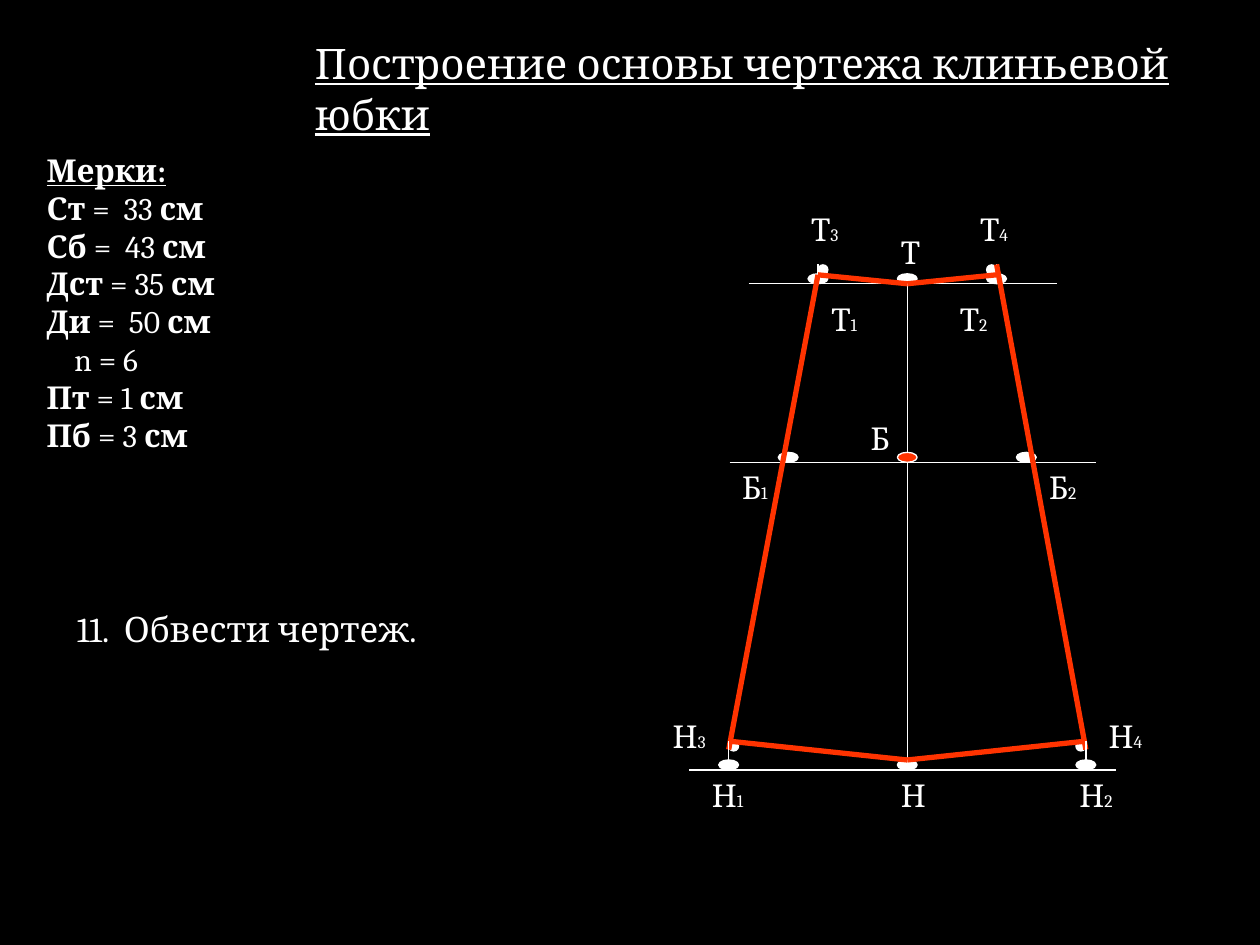
from dataclasses import dataclass

from lxml import etree
from pptx import Presentation
from pptx.dml.color import RGBColor
from pptx.enum.shapes import MSO_CONNECTOR, MSO_SHAPE
from pptx.enum.text import MSO_AUTO_SIZE
from pptx.oxml.ns import qn
from pptx.util import Cm, Pt

STRAIGHT = MSO_CONNECTOR.STRAIGHT
OVAL = MSO_SHAPE.OVAL
GROW = MSO_AUTO_SIZE.SHAPE_TO_FIT_TEXT


@dataclass(frozen=True)
class Theme:
    font: str = "Cambria"
    background: RGBColor = RGBColor(0, 0, 0)
    white: RGBColor = RGBColor(255, 255, 255)
    red: RGBColor = RGBColor(0xFF, 0x33, 0x00)
    title: int = 24
    step: int = 20
    body: int = 18
    index: int = 10
    thin: float = 0.75
    thick: float = 3


class Drawing:
    def __init__(self, slide, theme):
        self.slide = slide
        self.theme = theme
        slide.background.fill.solid()
        slide.background.fill.fore_color.rgb = theme.background

    def line(self, start, end, outline=False):
        connector = self.slide.shapes.add_connector(
            STRAIGHT, *(Cm(value) for value in (*start, *end)))
        connector.line.color.rgb = self.theme.red if outline else self.theme.white
        connector.line.width = Pt(self.theme.thick if outline else self.theme.thin)
        etree.SubElement(connector._element.spPr, qn("a:effectLst"))

    def dot(self, center, bottom, width=0.4, color=None):
        height = 0.2
        shape = self.slide.shapes.add_shape(
            OVAL, Cm(center - width / 2), Cm(bottom - height), Cm(width), Cm(height))
        shape.shadow.inherit = False
        shape.fill.solid()
        shape.fill.fore_color.rgb = color or self.theme.white
        shape.line.color.rgb = self.theme.white
        shape.line.width = Pt(self.theme.thin)

    def frame(self, left, top, width, height):
        box = self.slide.shapes.add_textbox(Cm(left), Cm(top), Cm(width), Cm(height))
        box.text_frame.word_wrap = True
        box.text_frame.auto_size = GROW
        return box.text_frame

    def style(self, paragraph, size):
        paragraph.font.name = self.theme.font
        paragraph.font.size = Pt(size)
        paragraph.font.color.rgb = self.theme.white

    def text(self, wording, left, top, width, height, size, underline=False):
        paragraph = self.frame(left, top, width, height).paragraphs[0]
        paragraph.text = wording
        self.style(paragraph, size)
        paragraph.font.underline = underline

    def label(self, letter, index, left, top, width):
        paragraph = self.frame(left, top, width, 1.02).paragraphs[0]
        self.style(paragraph, self.theme.body)
        paragraph.add_run().text = letter
        if index:
            run = paragraph.add_run()
            run.text = index
            run.font.size = Pt(self.theme.index)

    def measurements(self, heading, rows, left, top, width, height):
        frame = self.frame(left, top, width, height)
        paragraph = frame.paragraphs[0]
        paragraph.text = heading
        self.style(paragraph, self.theme.body)
        paragraph.font.bold = True
        paragraph.font.underline = True
        for name, value, unit in rows:
            paragraph = frame.add_paragraph()
            self.style(paragraph, self.theme.body)
            if not unit:
                paragraph._p.get_or_add_pPr().set("marL", str(Cm(0.56)))
            for wording, bold in ((name, bool(unit)), (value, False), (unit, True)):
                if wording:
                    run = paragraph.add_run()
                    run.text = wording
                    run.font.bold = bold


MEASUREMENTS = [
    ("Ст", " =  33 ", "см"),
    ("Сб", " =  43 ", "см"),
    ("Дст", " = 35 ", "см"),
    ("Ди", " =  50 ", "см"),
    ("n", " = 6", ""),
    ("Пт", " = 1 ", "см"),
    ("Пб", " = 3 ", "см"),
]

LABELS = [
    ("Т", "", 17.91, 4.57, 1.19),
    ("Т", "1", 16.51, 5.92, 1.09),
    ("Т", "2", 19.1, 5.92, 1.7),
    ("Т", "3", 16.1, 4.11, 1.85),
    ("Т", "4", 19.51, 4.11, 1.4),
    ("Б", "", 17.3, 8.33, 0.76),
    ("Б", "1", 14.71, 9.32, 1.12),
    ("Б", "2", 20.9, 9.32, 1.12),
    ("Н", "", 17.91, 15.52, 1.12),
    ("Н", "1", 14.1, 15.52, 1.17),
    ("Н", "2", 21.51, 15.52, 1.17),
    ("Н", "3", 13.31, 14.33, 1.19),
    ("Н", "4", 22.1, 14.33, 1.19),
]

AXIS = 18.29
WAIST, HIP, HEM = 5.72, 9.32, 15.52
WAIST_TOP, WAIST_SIDE = 5.33, 5.54
HEM_SIDE, SIDE_END, HEM_CENTER = 14.94, 15.11, 15.32
HALF_WAIST, HALF_HIP, HALF_HEM = 1.8, 2.4, 3.6


def draw_skirt(drawing):
    for left, right, level in ((15.09, 21.31, WAIST), (14.71, 22.1, HIP),
                               (13.89, 22.5, HEM)):
        drawing.line((left, level), (right, level))
    drawing.line((AXIS, WAIST), (AXIS, HEM))

    for level, half in ((WAIST, HALF_WAIST), (HIP, HALF_HIP), (HEM, HALF_HEM)):
        center_color = drawing.theme.red if level == HIP else drawing.theme.white
        drawing.dot(AXIS, level, color=center_color)
        for side in (-1, 1):
            drawing.dot(AXIS + side * half, level)

    for side, side_start in ((-1, WAIST_SIDE), (1, WAIST_TOP)):
        waist_x = AXIS + side * HALF_WAIST
        hem_x = AXIS + side * HALF_HEM
        drawing.line((waist_x, WAIST_TOP), (waist_x, WAIST))
        drawing.dot(waist_x - side * 0.1, WAIST_SIDE, width=0.2)
        drawing.dot(hem_x - side * 0.1, SIDE_END + 0.03, width=0.2)
        drawing.line((waist_x, side_start), (hem_x, SIDE_END), outline=True)
        drawing.line((hem_x, HEM_SIDE), (AXIS, HEM_CENTER), outline=True)
        drawing.line((waist_x, WAIST_SIDE), (AXIS, WAIST), outline=True)
        drawing.line((hem_x, HEM_SIDE), (hem_x, HEM_CENTER))

    for label in LABELS:
        drawing.label(*label)


def main():
    presentation = Presentation()
    presentation.slide_width = Cm(25.4)
    presentation.slide_height = Cm(19.05)
    slide = presentation.slides.add_slide(presentation.slide_layouts[6])
    theme = Theme()
    drawing = Drawing(slide, theme)

    draw_skirt(drawing)
    drawing.measurements("Мерки:", MEASUREMENTS, 0.69, 2.92, 5.16, 6.35)
    drawing.text("11.  Обвести чертеж.", 1.3, 12.12, 11, 1.09, theme.step)
    drawing.text("Построение основы чертежа клиньевой юбки",
                 6.1, 0.64, 19.3, 2.79, theme.title, underline=True)
    presentation.save("out.pptx")


if __name__ == "__main__":
    main()
